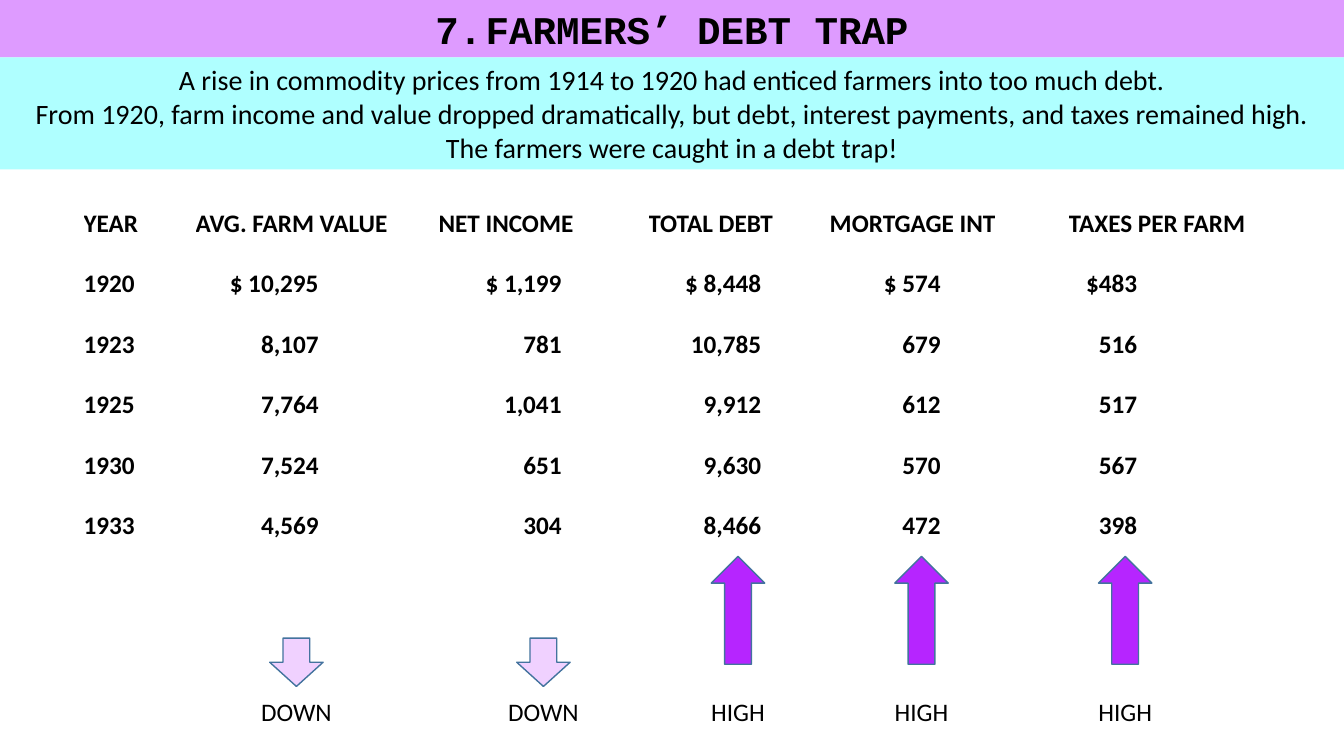
from lxml.etree import SubElement
from pptx import Presentation
from pptx.dml.color import RGBColor
from pptx.enum.shapes import MSO_SHAPE
from pptx.enum.text import MSO_ANCHOR, PP_ALIGN
from pptx.oxml.ns import qn
from pptx.util import Inches, Pt

COLOURS = {
    "title": "DE9BFF", "summary": "AFFFFF", "text": "000000",
    "down": "F0D1FF", "high": "B625FF", "outline": "43739E",
}
SUMMARY = [
    "A rise in commodity prices from 1914 to 1920 had enticed farmers into too much debt.",
    "From 1920, farm income and value dropped dramatically, but debt, interest payments, "
    "and taxes remained high.",
    "The farmers were caught in a debt trap!",
]
FARM_FIGURES = [
    ["YEAR", "AVG. FARM VALUE", "NET INCOME", "TOTAL DEBT", "MORTGAGE INT", "TAXES PER FARM"],
    ["1920", "$ 10,295", "$ 1,199", "$ 8,448", "$ 574", "$483"],
    ["1923", "8,107", "781", "10,785", "679", "516"],
    ["1925", "7,764", "1,041", "9,912", "612", "517"],
    ["1930", "7,524", "651", "9,630", "570", "567"],
    ["1933", "4,569", "304", "8,466", "472", "398"],
]
# Column widths, and the space to the right of each column's figures
COLUMN_WIDTHS = [1.11, 2.41, 2.08, 1.8, 2.37, 1.85]
FIGURE_MARGINS = [0, 1.19, 0.86, 0.68, 1.27, 1.17]
# Horizontal centre and direction of each trend
TRENDS = [(2.94, "DOWN"), (5.39, "DOWN"), (7.32, "HIGH"), (9.14, "HIGH"), (11.16, "HIGH")]


def colour(name):
    return RGBColor.from_string(COLOURS[name])


def add_text(paragraph, text, size, font="Calibri", bold=False, align=PP_ALIGN.CENTER):
    paragraph.alignment = align
    run = paragraph.add_run()
    run.text = text
    run.font.name = font
    run.font.size = Pt(size)
    run.font.bold = bold
    run.font.color.rgb = colour("text")


def add_filled_shape(slide, kind, left, top, width, height, fill):
    shape = slide.shapes.add_shape(
        kind, Inches(left), Inches(top), Inches(width), Inches(height))
    shape.shadow.inherit = False
    shape.fill.solid()
    shape.fill.fore_color.rgb = colour(fill)
    shape.line.fill.background()
    return shape


def add_band(slide, left, top, width, height, fill):
    band = add_filled_shape(slide, MSO_SHAPE.RECTANGLE, left, top, width, height, fill)
    band.text_frame.word_wrap = True
    band.text_frame.vertical_anchor = MSO_ANCHOR.MIDDLE
    return band.text_frame


def add_title(slide, left, top, width, height):
    paragraph = add_band(slide, left, top, width, height, "title").paragraphs[0]
    properties = paragraph._p.get_or_add_pPr()
    properties.set("marL", str(Inches(0.5)))
    properties.set("indent", str(-Inches(0.5)))
    SubElement(properties, qn("a:buFont"), typeface="Courier New")
    SubElement(properties, qn("a:buAutoNum"), type="arabicPeriod", startAt="7")
    add_text(paragraph, "FARMERS’ DEBT TRAP", 28, font="Courier New", bold=True)


def add_summary(slide, left, top, width, height):
    frame = add_band(slide, left, top, width, height, "summary")
    for index, line in enumerate(SUMMARY):
        paragraph = frame.add_paragraph() if index else frame.paragraphs[0]
        add_text(paragraph, line, 20)


def add_figures_table(slide, left, top, width, height):
    table = slide.shapes.add_table(
        len(FARM_FIGURES), len(COLUMN_WIDTHS),
        Inches(left), Inches(top), Inches(width), Inches(height)).table
    table.first_row = False
    table.horz_banding = False
    for column, column_width in zip(table.columns, COLUMN_WIDTHS):
        column.width = Inches(column_width)
    for row_index, row in enumerate(FARM_FIGURES):
        for column_index, text in enumerate(row):
            is_figure = row_index > 0 and column_index > 0
            cell = table.cell(row_index, column_index)
            cell.fill.background()
            cell.vertical_anchor = MSO_ANCHOR.MIDDLE
            cell.margin_left = 0
            cell.margin_right = Inches(FIGURE_MARGINS[column_index] if is_figure else 0)
            add_text(cell.text_frame.paragraphs[0], text, 18, bold=True,
                     align=PP_ALIGN.RIGHT if is_figure else PP_ALIGN.LEFT)


def add_trend(slide, centre, top, direction):
    # Arrow
    if direction == "DOWN":
        kind, offset, height, fill = MSO_SHAPE.DOWN_ARROW, 0.81, 0.48, "down"
    else:
        kind, offset, height, fill = MSO_SHAPE.UP_ARROW, 0, 1.07, "high"
    width = 0.53
    arrow = add_filled_shape(
        slide, kind, centre - width / 2, top + offset, width, height, fill)
    arrow.line.color.rgb = colour("outline")
    arrow.line.width = Pt(1)

    # Label
    label_width = 0.91
    label = slide.shapes.add_textbox(
        Inches(centre - label_width / 2), Inches(top + 1.34), Inches(label_width), Inches(0.4))
    label.text_frame.word_wrap = False
    add_text(label.text_frame.paragraphs[0], direction, 18)


def main():
    presentation = Presentation()
    presentation.slide_width = Inches(13.33)
    presentation.slide_height = Inches(7.5)
    slide = presentation.slides.add_slide(presentation.slide_layouts[6])
    add_title(slide, 0, 0, 13.33, 0.57)
    add_summary(slide, 0, 0.57, 13.33, 1.11)
    add_figures_table(slide, 0.83, 1.92, sum(COLUMN_WIDTHS), 3.6)
    for centre, direction in TRENDS:
        add_trend(slide, centre, 5.52, direction)
    presentation.save("out.pptx")


if __name__ == "__main__":
    main()
